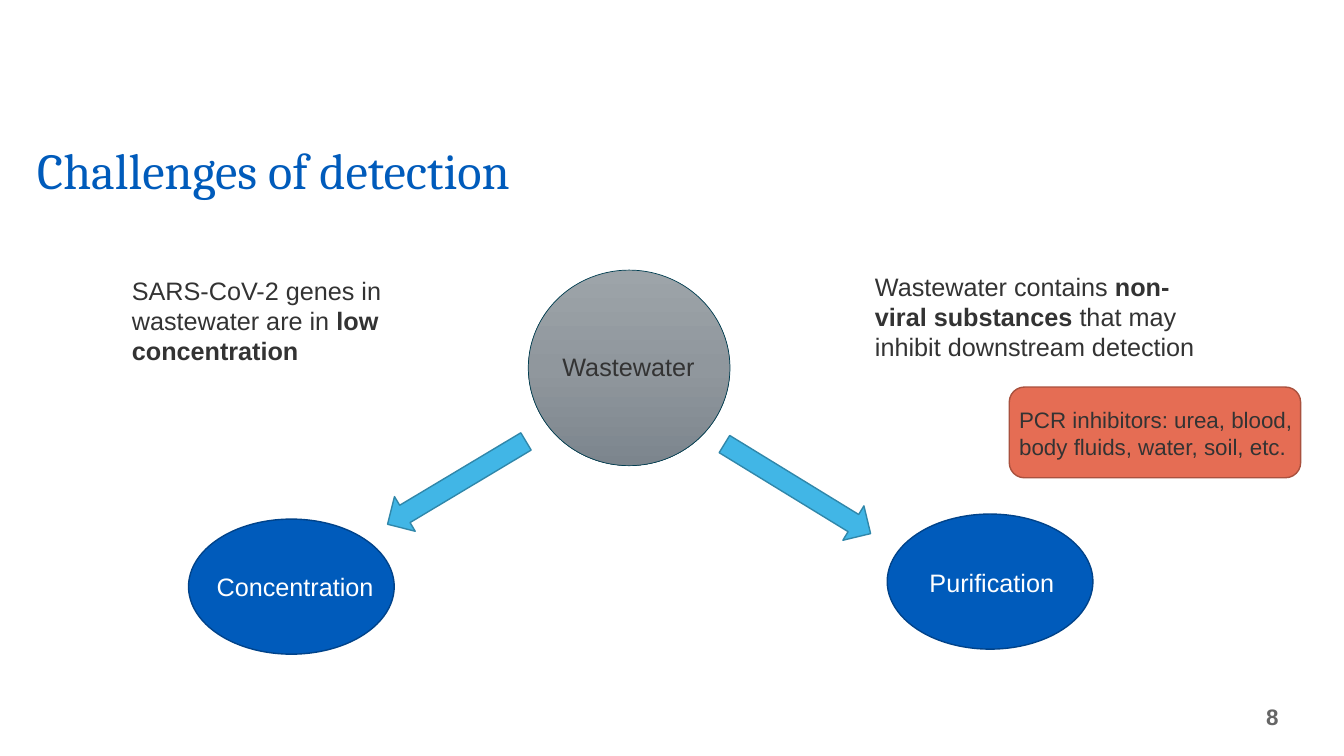
from copy import deepcopy

from pptx import Presentation
from pptx.dml.color import RGBColor
from pptx.enum import shapes, text
from pptx.util import Inches, Pt

BLUE, DARK, WHITE = "005BBB", "333333", "FFFFFF"
SHAPE = shapes.MSO_SHAPE


def color(value):
    return RGBColor.from_string(value)


def add_text(slide, box, parts, size=18, ink=DARK, font="Arial",
             align=text.PP_ALIGN.LEFT, anchor=text.MSO_ANCHOR.TOP):
    """Add one paragraph from (wording, bold) parts."""
    tf = slide.shapes.add_textbox(*map(Inches, box)).text_frame
    tf.word_wrap = True
    tf.vertical_anchor = anchor
    p = tf.paragraphs[0]
    p.alignment = align
    for wording, bold in parts:
        r = p.add_run()
        r.text = wording
        r.font.name, r.font.size, r.font.bold = font, Pt(size), bold
        r.font.color.rgb = color(ink)


def add_shape(slide, kind, box, fill, line, width=1, rotation=0):
    sp = slide.shapes.add_shape(kind, *map(Inches, box))
    sp.shadow.inherit = False
    sp.rotation = rotation
    sp.fill.solid()
    sp.fill.fore_color.rgb = color(fill)
    sp.line.color.rgb = color(line)
    sp.line.width = Pt(width)
    return sp


def shade(sp, tones):
    """Fill a shape from top to bottom with evenly spaced tones."""
    sp.fill.gradient()
    sp.fill.gradient_angle = 270
    stops = sp.fill.gradient_stops
    first = stops[0]._gs
    for _ in tones[len(stops):]:
        first.addnext(deepcopy(first))
    for i, (stop, tone) in enumerate(zip(sp.fill.gradient_stops, tones)):
        stop.position = i / (len(tones) - 1)
        stop.color.rgb = color(tone)


def add_source(slide, x, y):
    circle = add_shape(slide, SHAPE.OVAL, (x, y, 2, 1.94), "90979D", "003E51", 0.5)
    shade(circle, ["9DA4A9", "90979D", "7C858D"])
    add_text(slide, (x + 0.24, y + 0.76, 2, 0.4), [("Wastewater", False)])


def add_step(slide, x, y, label, dx, dy):
    """Add an ellipse whose label is offset by dx, dy."""
    add_shape(slide, SHAPE.OVAL, (x, y, 2.04, 1.34), BLUE, "00438A")
    add_text(slide, (x + dx, y + dy, 1.91, 0.4), [(label, False)], ink=WHITE)


def add_arrow(slide, x, y, length, rotation):
    add_shape(slide, SHAPE.RIGHT_ARROW, (x, y, length, 0.4), "41B6E6", "3087AA",
              rotation=rotation)


def add_inhibitors(slide, x, y):
    add_shape(slide, SHAPE.ROUNDED_RECTANGLE, (x, y, 2.89, 0.9), "E56D54", "A9513E")
    add_text(slide, (x, y + 0.14, 3.07, 0.64),
             [("PCR inhibitors: urea, blood, body fluids, water, soil, etc.", False)],
             size=16)


def add_challenges(slide):
    add_source(slide, 5.24, 2.68)
    add_step(slide, 1.87, 5.15, "Concentration", 0.18, 0.47)
    add_step(slide, 8.8, 5.1, "Purification", 0.32, 0.48)
    add_arrow(slide, 3.73, 4.59, 1.6, 149.1)
    add_arrow(slide, 7.06, 4.65, 1.7, 31.5)
    add_text(slide, (1.21, 2.68, 2.83, 1.01),
             [("SARS-CoV-2 genes in wastewater are in ", False),
              ("low concentration", True)])
    add_text(slide, (8.58, 2.64, 3.5, 1.01),
             [("Wastewater contains ", False), ("non-viral substances ", True),
              ("that may inhibit downstream detection", False)])
    add_inhibitors(slide, 10.01, 3.84)


def main():
    prs = Presentation()
    prs.slide_width, prs.slide_height = Inches(13.33), Inches(7.5)
    slide = prs.slides.add_slide(prs.slide_layouts[6])
    add_text(slide, (8.28, 6.91, 4.5, 0.4), [("8", True)], size=16, ink="666666",
             align=text.PP_ALIGN.RIGHT, anchor=text.MSO_ANCHOR.MIDDLE)
    add_text(slide, (0.27, 1.33, 6.52, 0.71), [("Challenges of detection", False)],
             size=36, ink=BLUE, font="Cambria")
    add_challenges(slide)
    prs.save("out.pptx")


if __name__ == "__main__":
    main()
